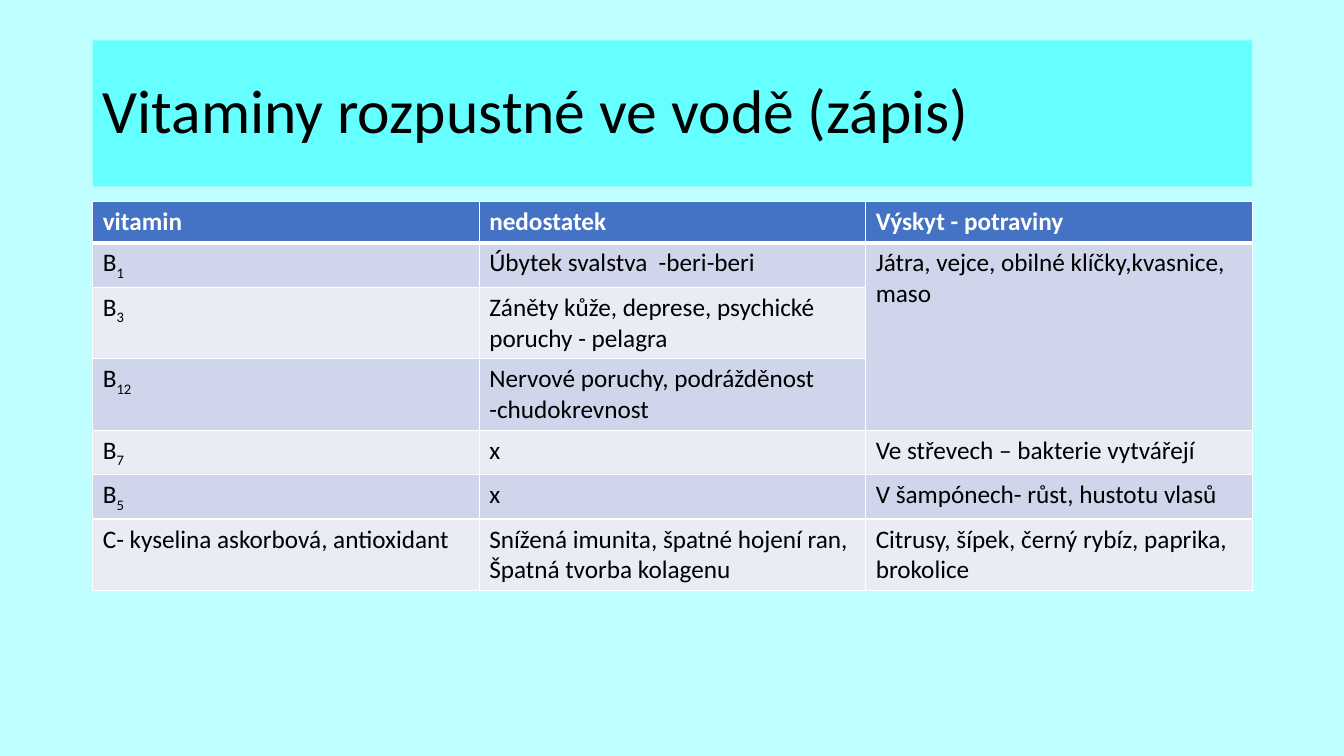
from lxml import etree
from pptx import Presentation
from pptx.dml.color import RGBColor
from pptx.enum.shapes import MSO_SHAPE
from pptx.enum.text import MSO_ANCHOR, PP_ALIGN
from pptx.oxml.ns import qn
from pptx.util import Inches, Pt

RECT = MSO_SHAPE.RECTANGLE
MIDDLE = MSO_ANCHOR.MIDDLE
LEFT = PP_ALIGN.LEFT

COLORS = {
    "background": "C0FFFF",
    "title": "66FFFF",
    "header": "4472C4",
    "odd": "CFD5EA",
    "even": "E9EBF5",
    "white": "FFFFFF",
    "black": "000000",
}
TITLE_FONT = {"name": "Calibri", "size": Pt(44), "bold": False}
HEADER_FONT = {"name": "Calibri", "size": Pt(18), "bold": True}
BODY_FONT = {"name": "Calibri", "size": Pt(18), "bold": False}

TITLE = "Vitaminy rozpustné ve vodě (zápis)"
VITAMINS = [
    ("vitamin", "nedostatek", "Výskyt - potraviny"),
    (("B", "1"), "Úbytek svalstva  -beri-beri",
     "Játra, vejce, obilné klíčky,kvasnice, maso"),
    (("B", "3"), "Záněty kůže, deprese, psychické poruchy - pelagra", ""),
    (("B", "12"), "Nervové poruchy, podrážděnost\n-chudokrevnost", ""),
    (("B", "7"), "x", "Ve střevech – bakterie vytvářejí"),
    (("B", "5"), "x", "V šampónech- růst, hustotu vlasů"),
    ("C- kyselina askorbová, antioxidant",
     "Snížená imunita, špatné hojení ran,\nŠpatná tvorba kolagenu",
     "Citrusy, šípek, černý rybíz, paprika, brokolice"),
]


def rgb(name):
    """Return the named colour."""
    return RGBColor.from_string(COLORS[name])


def paint(target, color):
    """Fill a shape, cell or background with a solid colour."""
    target.fill.solid()
    target.fill.fore_color.rgb = rgb(color)


def add_run(p, text, font, color, subscript=False):
    """Append a formatted run to a paragraph."""
    r = p.add_run()
    r.text = text
    for key, value in font.items():
        setattr(r.font, key, value)
    r.font.color.rgb = rgb(color)
    if subscript:
        r.font._element.set("baseline", "-25000")


def add_title(slide, text):
    """Draw the title band."""
    sp = slide.shapes.add_shape(RECT, Inches(0.92), Inches(0.4), Inches(11.5), Inches(1.45))
    sp.shadow.inherit = False
    sp.line.fill.background()
    paint(sp, "title")
    tf = sp.text_frame
    tf.word_wrap = True
    tf.vertical_anchor = MIDDLE
    p = tf.paragraphs[0]
    p.alignment = LEFT
    p.line_spacing = 0.9
    add_run(p, text, TITLE_FONT, "black")


def set_borders(cell, top, bottom):
    """Give a cell white borders, with the top and bottom widths in points."""
    tc_pr = cell._tc.get_or_add_tcPr()
    for side, width in {"L": 1, "R": 1, "T": top, "B": bottom}.items():
        ln = etree.SubElement(tc_pr, qn(f"a:ln{side}"), w=str(Pt(width)))
        fill = etree.SubElement(ln, qn("a:solidFill"))
        etree.SubElement(fill, qn("a:srgbClr"), val=COLORS["white"])


def fill_cell(cell, content, font, color):
    """Write plain lines, or a symbol with its subscript, into a cell."""
    tf = cell.text_frame
    if isinstance(content, tuple):
        symbol, index = content
        add_run(tf.paragraphs[0], symbol, font, color)
        add_run(tf.paragraphs[0], index, font, color, subscript=True)
        return
    for i, line in enumerate(content.splitlines()):
        p = tf.add_paragraph() if i else tf.paragraphs[0]
        add_run(p, line, font, color)


def add_vitamin_table(slide, rows):
    """Draw the banded table of vitamins."""
    n_cols = len(rows[0])
    table = slide.shapes.add_table(
        len(rows), n_cols, Inches(0.92), Inches(2), Inches(11.5), Inches(0.41 * len(rows))
    ).table
    for i, row in enumerate(rows):
        band = "header" if i == 0 else ("even", "odd")[i % 2]
        font, color = (HEADER_FONT, "white") if i == 0 else (BODY_FONT, "black")
        for j, content in enumerate(row):
            cell = table.cell(i, j)
            set_borders(cell, 3 if i == 1 else 1, 3 if i == 0 else 1)
            paint(cell, band)
            fill_cell(cell, content, font, color)
    table.cell(1, 2).merge(table.cell(3, 2))


def main():
    """Build and save the slide."""
    prs = Presentation()
    prs.slide_width, prs.slide_height = Inches(13.33), Inches(7.5)
    s = prs.slides.add_slide(prs.slide_layouts[6])
    paint(s.background, "background")
    add_title(s, TITLE)
    add_vitamin_table(s, VITAMINS)
    prs.save("out.pptx")


if __name__ == "__main__":
    main()
